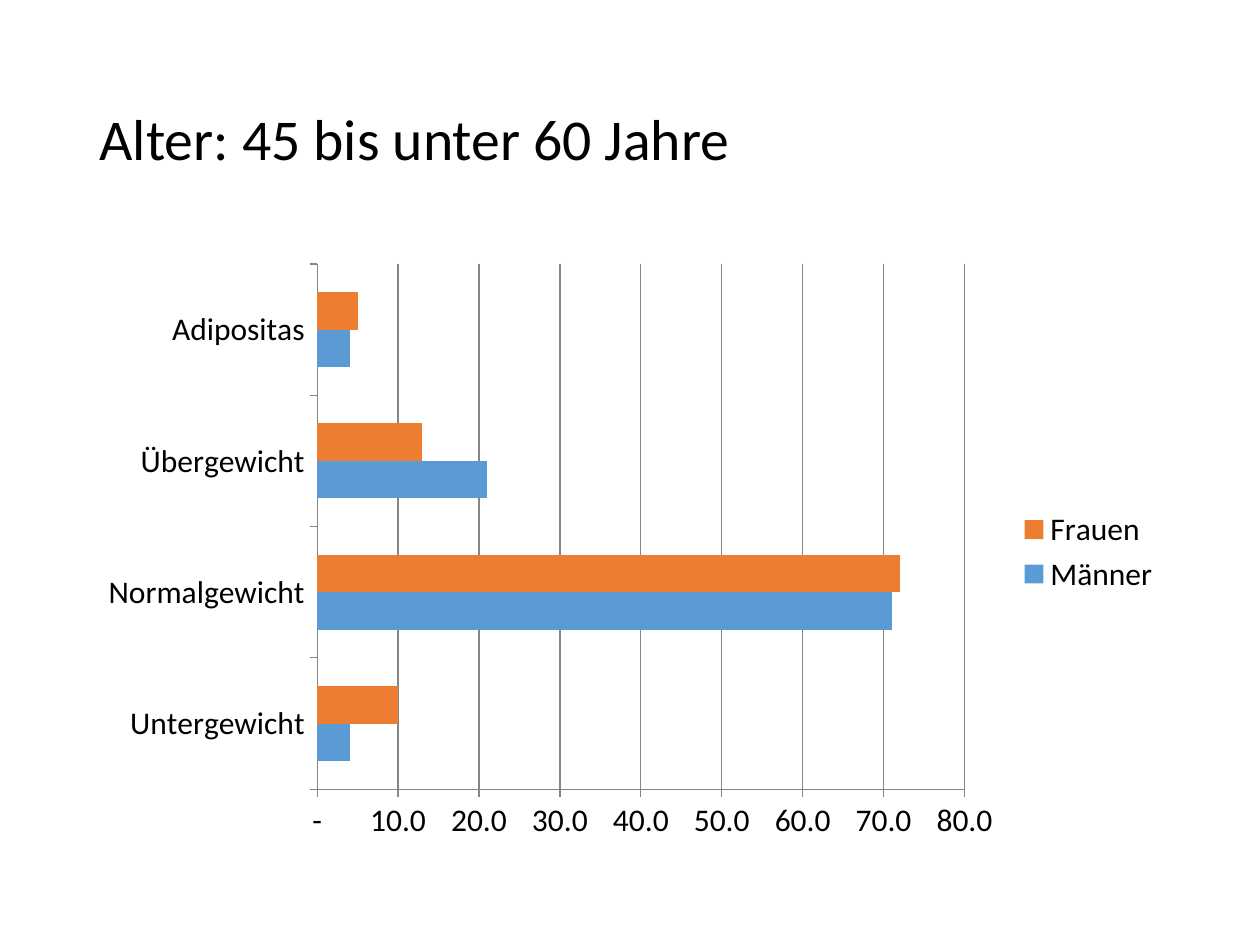
"""Build a slide with a bar chart of weight classes by sex."""
from pptx import Presentation
from pptx.chart.data import CategoryChartData
from pptx.dml.color import RGBColor
from pptx.enum.chart import XL_CHART_TYPE, XL_LEGEND_POSITION, XL_TICK_MARK
from pptx.enum.text import MSO_ANCHOR, PP_ALIGN
from pptx.util import Inches, Pt

BARS = XL_CHART_TYPE.BAR_CLUSTERED
RIGHT = XL_LEGEND_POSITION.RIGHT
OUT = XL_TICK_MARK.OUTSIDE
MIDDLE = MSO_ANCHOR.MIDDLE
LEFT = PP_ALIGN.LEFT
BLACK = RGBColor(0x00, 0x00, 0x00)
GREY = RGBColor(0x86, 0x86, 0x86)
BLUE = RGBColor(0x5B, 0x9B, 0xD5)
ORANGE = RGBColor(0xED, 0x7D, 0x31)
FONT = "Calibri"
FORMAT = '#,##0.0;#,##0.0;"-"'

deck = Presentation()
deck.slide_width, deck.slide_height = Inches(10), Inches(7.5)
slide = deck.slides.add_slide(deck.slide_layouts[5])
edge = Inches(0.69)
width = deck.slide_width - 2 * edge

title = slide.shapes.title
title.left, title.top = edge, Inches(0.4)
title.width, title.height = width, Inches(1.45)
frame = title.text_frame
frame.vertical_anchor = MIDDLE
line = frame.paragraphs[0]
line.alignment = LEFT
line.line_spacing = 0.9
run = line.add_run()
run.text = "Alter: 45 bis unter 60 Jahre"
run.font.name, run.font.size = FONT, Pt(33)
run.font.color.rgb = BLACK

data = CategoryChartData(number_format=FORMAT)
data.categories = ["Untergewicht", "Normalgewicht", "Übergewicht", "Adipositas"]
data.add_series("Männer", [4, 71, 21, 4])
data.add_series("Frauen", [10, 72, 13, 5])
chart = slide.shapes.add_chart(
    BARS, edge, Inches(2), width, Inches(4.76), data).chart
chart.has_title = False
chart.font.name, chart.font.size = FONT, Pt(18)
chart.font.color.rgb = BLACK
chart.has_legend = True
chart.legend.position = RIGHT
chart.legend.include_in_layout = False

plot = chart.plots[0]
plot.gap_width, plot.overlap = 150, 0
plot.vary_by_categories = False
for series, color in zip(plot.series, (BLUE, ORANGE)):
    series.invert_if_negative = False
    series.format.fill.solid()
    series.format.fill.fore_color.rgb = color

scale = chart.value_axis
scale.minimum_scale, scale.maximum_scale, scale.major_unit = 0, 80, 10
scale.has_major_gridlines = True
scale.tick_labels.number_format = FORMAT
scale.tick_labels.number_format_is_linked = False
for axis in (chart.category_axis, scale):
    axis.major_tick_mark = OUT
for part in (chart.category_axis, scale, scale.major_gridlines):
    part.format.line.color.rgb = GREY

deck.save("out.pptx")
